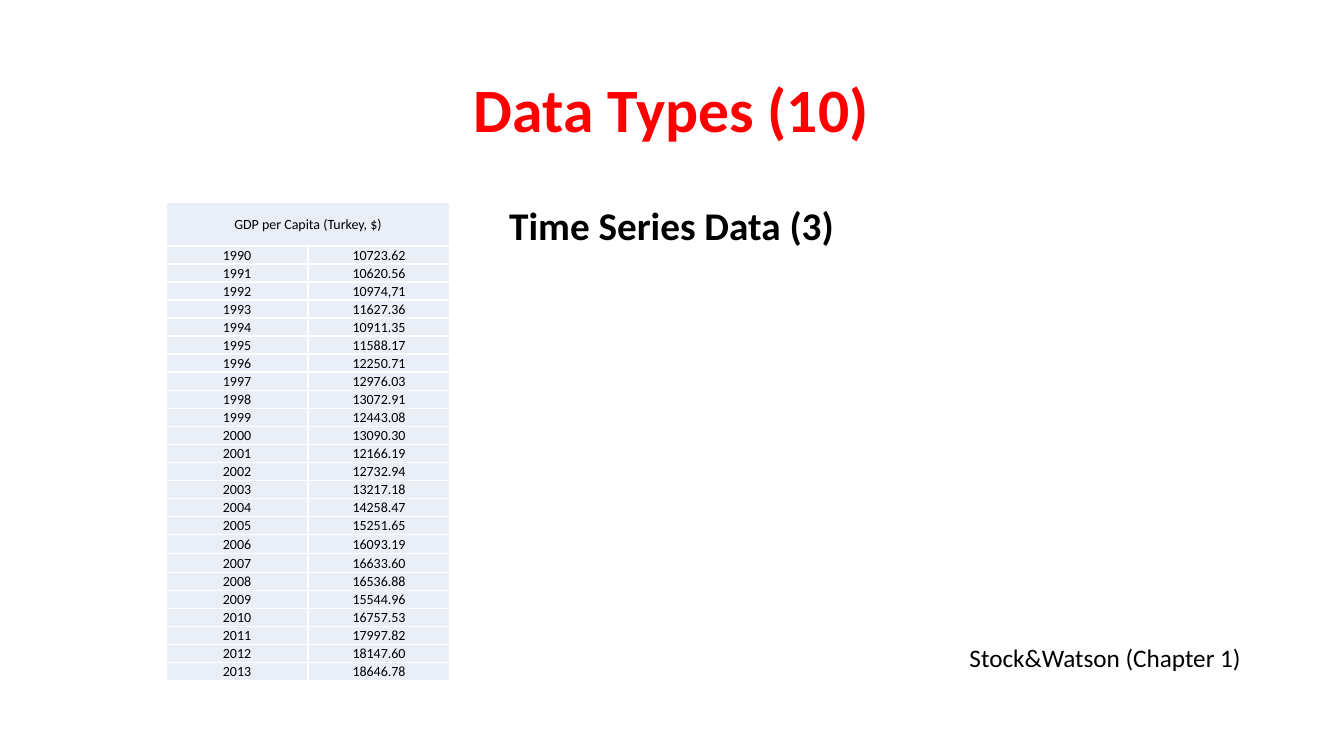
from lxml.etree import SubElement
from pptx import Presentation
from pptx.dml.color import RGBColor
from pptx.enum.text import MSO_ANCHOR, MSO_AUTO_SIZE, PP_ALIGN
from pptx.oxml import parse_xml
from pptx.oxml.ns import nsdecls, qn
from pptx.util import Pt

EMU_PER_INCH = 914400
PX_PER_INCH = 100.8
FONT = "Calibri"
FIRST_YEAR = 1990
GDP_PER_CAPITA = (
    "10723.62 10620.56 10974,71 11627.36 10911.35 11588.17 12250.71 12976.03 "
    "13072.91 12443.08 13090.30 12166.19 12732.94 13217.18 14258.47 15251.65 "
    "16093.19 16633.60 16536.88 15544.96 16757.53 17997.82 18147.60 18646.78"
).split()
TALLER_YEARS = (2006, 2007)


def px(length):
    return round(length * EMU_PER_INCH / PX_PER_INCH)


def color(hex_code):
    return RGBColor.from_string(hex_code)


def place(part, box):
    part.left, part.top, part.width, part.height = map(px, box)


def format_paragraph(paragraph, size, align, hex_code="000000", bold=False):
    paragraph.alignment = align
    for run in paragraph.runs:
        run.font.name = FONT
        run.font.size = Pt(size)
        run.font.bold = bold
        run.font.color.rgb = color(hex_code)


def add_heading(slide, box):
    heading = slide.shapes.title
    place(heading, box)
    frame = heading.text_frame
    frame.text = "Data Types (10)"
    frame.vertical_anchor = MSO_ANCHOR.MIDDLE
    frame.auto_size = MSO_AUTO_SIZE.NONE
    frame.paragraphs[0].line_spacing = 0.9
    format_paragraph(frame.paragraphs[0], 44, PP_ALIGN.CENTER, "FF0000", True)


def add_topic_and_reference(slide, box):
    body = slide.placeholders[1]
    place(body, box)
    frame = body.text_frame
    frame.text = "Time Series Data (3)\nStock&Watson (Chapter 1)"
    frame.auto_size = MSO_AUTO_SIZE.NONE
    topic, reference = frame.paragraphs
    format_paragraph(topic, 28, PP_ALIGN.CENTER, bold=True)
    format_paragraph(reference, 18, PP_ALIGN.RIGHT)
    for paragraph, space in ((topic, 10), (reference, 283)):
        paragraph.line_spacing = 0.9
        paragraph.space_before = Pt(space)
        properties = paragraph._p.get_or_add_pPr()
        properties.set("marL", "0")
        properties.set("indent", "0")
        SubElement(properties, qn("a:buNone"))


def add_borders(cell, hex_code):
    properties = cell._tc.get_or_add_tcPr()
    for position, side in enumerate("LRTB"):
        properties.insert(position, parse_xml(
            f'<a:ln{side} {nsdecls("a")} w="12700"><a:solidFill>'
            f'<a:srgbClr val="{hex_code}"/></a:solidFill></a:ln{side}>'))


def format_cell(cell, anchor):
    cell.margin_left = cell.margin_right = cell.margin_top = px(1)
    cell.margin_bottom = 0
    cell.vertical_anchor = anchor
    cell.fill.solid()
    cell.fill.fore_color.rgb = color("EAEFF7")
    add_borders(cell, "FFFFFF")
    format_paragraph(cell.text_frame.paragraphs[0], 10, PP_ALIGN.CENTER)


def add_gdp_table(slide, box):
    row_count = len(GDP_PER_CAPITA) + 1
    gdp = slide.shapes.add_table(row_count, 2, *map(px, box)).table
    gdp.first_row = gdp.horz_banding = False
    gdp.cell(0, 0).merge(gdp.cell(0, 1))
    gdp.cell(0, 0).text = "GDP per Capita (Turkey, $)"
    gdp.rows[0].height = px(44)
    for row, value in enumerate(GDP_PER_CAPITA, 1):
        year = FIRST_YEAR + row - 1
        gdp.rows[row].height = px(19 if year in TALLER_YEARS else 18)
        gdp.cell(row, 0).text = str(year)
        gdp.cell(row, 1).text = value
    for row in range(row_count):
        for column in range(2):
            anchor = MSO_ANCHOR.BOTTOM if row else MSO_ANCHOR.MIDDLE
            format_cell(gdp.cell(row, column), anchor)


def main():
    deck = Presentation()
    deck.slide_width, deck.slide_height = px(1344), px(756)
    slide = deck.slides.add_slide(deck.slide_layouts[1])
    add_heading(slide, (92, 40, 1159, 146))
    add_topic_and_reference(slide, (92, 202, 1159, 480))
    add_gdp_table(slide, (166, 202, 284, 478))
    deck.save("out.pptx")


if __name__ == "__main__":
    main()
